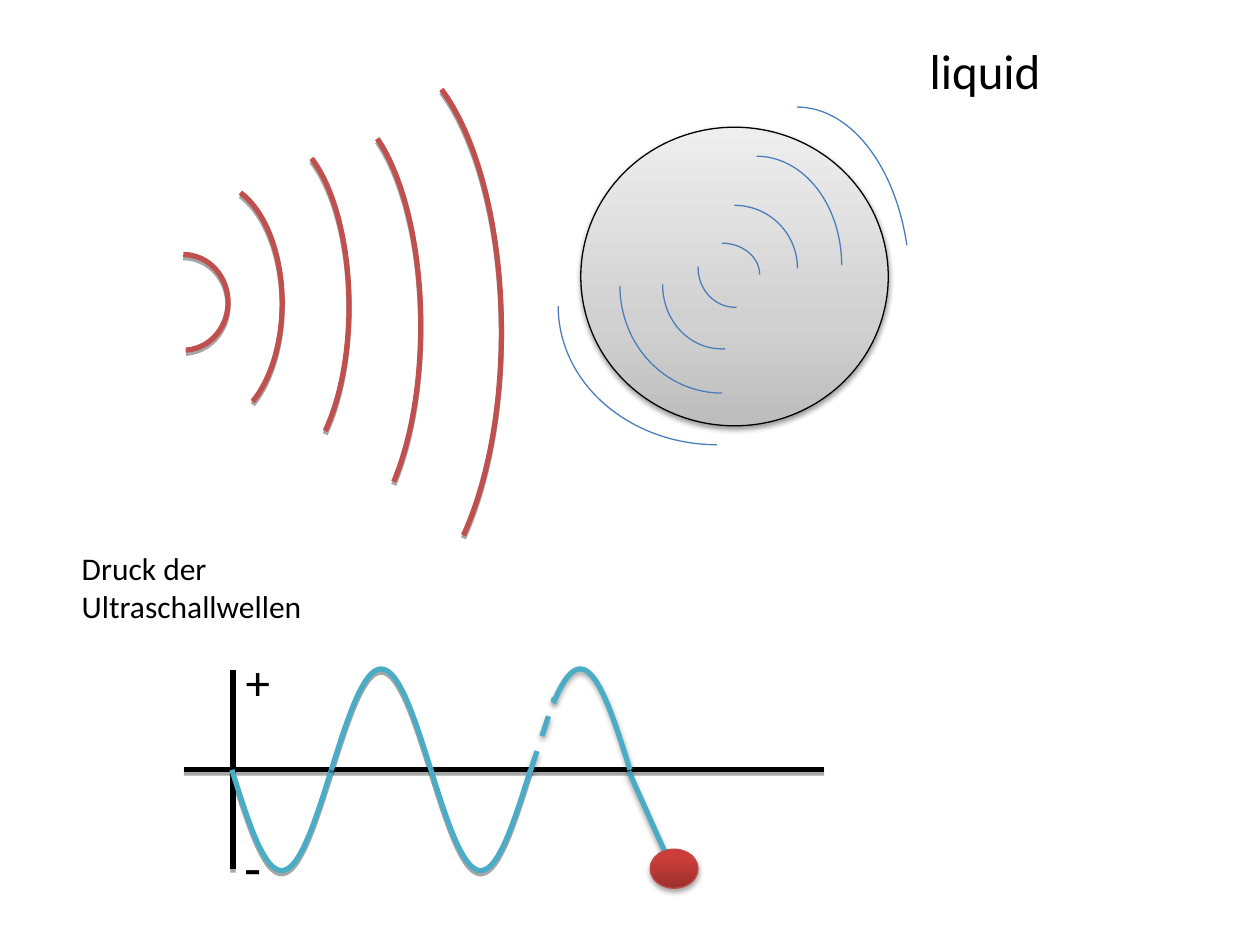
"""Build a slide of ultrasound waves meeting a bubble in liquid, above a pressure curve."""
from copy import deepcopy
from dataclasses import dataclass
from math import pi, sin

from lxml.etree import SubElement
from pptx import Presentation
from pptx.dml.color import RGBColor
from pptx.enum.dml import MSO_LINE
from pptx.enum.shapes import MSO_CONNECTOR, MSO_SHAPE
from pptx.enum.text import MSO_AUTO_SIZE
from pptx.oxml.ns import qn
from pptx.util import Inches, Pt


@dataclass(frozen=True)
class Theme:
    font: str = "Calibri"
    ink: str = "000000"
    echo: str = "4A7EBB"
    sound: str = "C0504D"
    pressure: str = "4BACC6"
    ball_edge: str = "BF4C48"
    bubble_fill: tuple = ((0, "BDBDBD"), (0.35, "D1D1D1"), (1, "EEEEEE"))
    ball_fill: tuple = ((0, "9C2F2D"), (0.8, "CB3E3A"), (1, "CE3B37"))
    thin: float = 0.75
    thick: float = 3
    body: int = 18
    large: int = 28
    minus: int = 32


theme = Theme()
deck = Presentation()
deck.slide_width, deck.slide_height = Inches(10), Inches(7.5)
column = deck.slide_width / 10
row = deck.slide_height / 7.5
slide = deck.slides.add_slide(deck.slide_layouts[6])
shapes = slide.shapes


def grid(*lengths):
    return [round(length * (row if i % 2 else column)) for i, length in enumerate(lengths)]


def outline(shape, color, width, shadow=None):
    shape.line.color.rgb = RGBColor.from_string(color)
    shape.line.width = Pt(width)
    effects = SubElement(shape._element.spPr, qn("a:effectLst"))
    if shadow:
        opacity, blur, distance = shadow
        cast = SubElement(effects, qn("a:outerShdw"), blurRad=str(Pt(blur)),
                          dist=str(Pt(distance)), dir="5400000", rotWithShape="0")
        tint = SubElement(cast, qn("a:srgbClr"), val=theme.ink)
        SubElement(tint, qn("a:alpha"), val=str(opacity * 1000))


hard = (35, 0, 1.8)
soft = (35, 3.1, 1.8)
bubble_shadow = (38, 3.1, 1.6)

bubble = shapes.add_shape(MSO_SHAPE.OVAL, *grid(4.61, 1.01, 2.44, 2.37))
outline(bubble, theme.ink, theme.thin, bubble_shadow)

echoes = [
    (5.43, 1.93, 0.6, 0.5, 270, 0),
    (5.33, 1.63, 1, 1, 270, 0),
    (5.33, 1.24, 1.35, 1.73, 270, 0),
    (5.43, 0.85, 1.79, 2.83, 270, 340),
    (5.54, 1.81, 0.59, 0.63, 88, 182),
    (5.26, 1.76, 0.94, 1.01, 87, 181),
    (4.92, 1.42, 1.62, 1.7, 90, 180),
    (4.43, 1.33, 2.52, 2.2, 90, 180),
]
sound_waves = [
    (1.1, 2.02, 0.71, 0.76, 270, 87),
    (1.14, 1.45, 1.1, 1.91, 284, 68),
    (1.59, 1.08, 1.18, 2.7, 284, 68),
    (1.91, 0.85, 1.43, 3.47, 284, 68),
    (2.07, 0.41, 1.91, 4.44, 284, 68),
]
for arcs, color, width, shadow in (
    (echoes, theme.echo, theme.thin, None),
    (sound_waves, theme.sound, theme.thick, hard),
):
    for *box, start, end in arcs:
        arc = shapes.add_shape(MSO_SHAPE.ARC, *grid(*box))
        arc.adjustments[0], arc.adjustments[1] = start * 0.6, end * 0.6
        arc.fill.background()
        outline(arc, color, width, shadow)

origin, zero, half_wave, amplitude = 1.84, 6.11, 0.79, 0.8
strokes = [
    ((1.85, 5.32, 1.85, 6.9), theme.ink, hard, None),
    ((1.46, zero, 6.54, zero), theme.ink, hard, None),
    ((4.21, 6.12, 4.4, 5.54), theme.pressure, soft, MSO_LINE.DASH),
    ((4.99, 6.12, 5.33, 6.88), theme.pressure, soft, None),
]
for ends, color, shadow, dash in strokes:
    stroke = shapes.add_connector(MSO_CONNECTOR.STRAIGHT, *grid(*ends))
    outline(stroke, color, theme.thick, shadow)
    if dash:
        stroke.line.dash_style = dash

steps = 40
for first, last, shadow in ((0, 1, hard), (1, 2, hard), (2, 3, hard), (3.23, 4, soft)):
    phases = [first + (last - first) * step / steps for step in range(steps + 1)]
    curve = [grid(origin + half_wave * phase, zero + amplitude * sin(pi * phase))
             for phase in phases]
    builder = shapes.build_freeform(*curve[0])
    builder.add_line_segments(curve[1:], close=False)
    wave = builder.convert_to_shape()
    wave.fill.background()
    outline(wave, theme.pressure, theme.thick, shadow)

ball = shapes.add_shape(MSO_SHAPE.OVAL, *grid(5.16, 6.74, 0.38, 0.31))
outline(ball, theme.ball_edge, theme.thin, soft)

for disc, shades in ((bubble, theme.bubble_fill), (ball, theme.ball_fill)):
    disc.fill.gradient()
    disc.fill.gradient_angle = 90
    stops = disc._element.spPr.find(".//" + qn("a:gsLst"))
    stops.append(deepcopy(stops[-1]))
    for stop, (position, shade) in zip(disc.fill.gradient_stops, shades):
        stop.position = position
        stop.color.rgb = RGBColor.from_string(shade)

labels = [
    ("liquid", (7.28, 0.27, 1.5, 0.57), theme.large),
    ("Druck der Ultraschallwellen", (0.55, 4.31, 2.52, 0.71), theme.body),
    ("+", (1.85, 5.12, 0.32, 0.57), theme.large),
    ("-", (1.84, 6.56, 0.63, 0.64), theme.minus),
]
for wording, box, size in labels:
    label = shapes.add_textbox(*grid(*box)).text_frame
    label.word_wrap = True
    label.auto_size = MSO_AUTO_SIZE.SHAPE_TO_FIT_TEXT
    label.text = wording
    font = label.paragraphs[0].runs[0].font
    font.name, font.size = theme.font, Pt(size)
    font.color.rgb = RGBColor.from_string(theme.ink)

deck.save("out.pptx")
